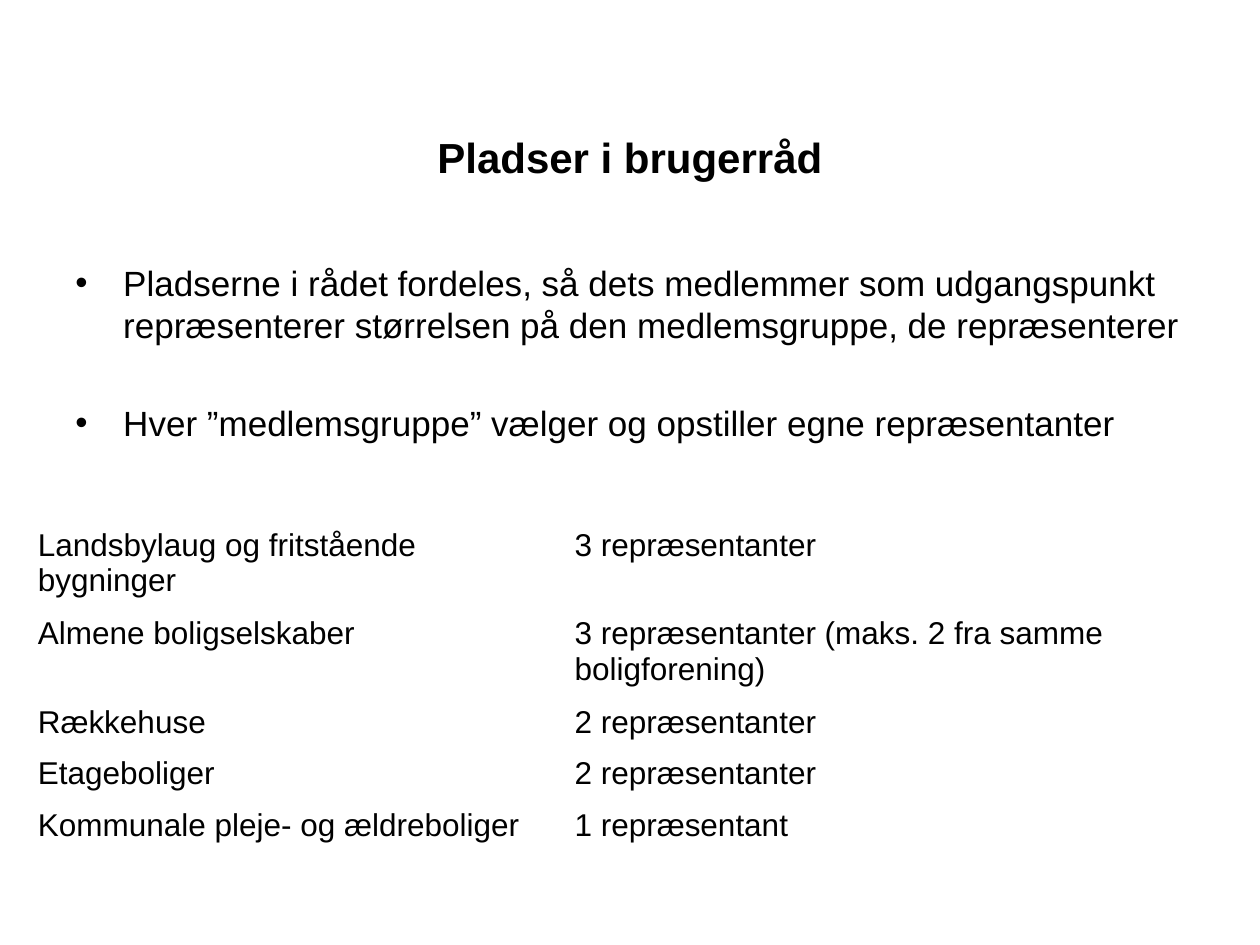
from lxml import etree
from pptx import Presentation
from pptx.dml.color import RGBColor
from pptx.enum.text import MSO_ANCHOR as Anchor, PP_ALIGN as Align
from pptx.oxml.ns import qn
from pptx.util import Inches, Pt

COLORS = {"text": "000000", "background": "FFFFFF"}
FONT = "Arial"

TITLE = "Pladser i brugerråd"
BULLETS = [
    "Pladserne i rådet fordeles, så dets medlemmer som udgangspunkt "
    "repræsenterer størrelsen på den medlemsgruppe, de repræsenterer",
    "Hver ”medlemsgruppe” vælger og opstiller egne repræsentanter",
]
SEATS = [
    ("Landsbylaug og fritstående bygninger", "3 repræsentanter"),
    ("Almene boligselskaber",
     "3 repræsentanter (maks. 2 fra samme boligforening)"),
    ("Rækkehuse", "2 repræsentanter"),
    ("Etageboliger", "2 repræsentanter"),
    ("Kommunale pleje- og ældreboliger", "1 repræsentant"),
]
COLUMN_WIDTHS = (4.26, 5.5)
ROW_HEIGHT = 0.41


def style_text(para, size, bold=False):
    for span in para.runs:
        span.font.name = FONT
        span.font.size = Pt(size)
        span.font.bold = bold
        span.font.color.rgb = RGBColor.from_string(COLORS["text"])


def add_box(page, left, top, width, height, anchor):
    box = page.shapes.add_textbox(
        Inches(left), Inches(top), Inches(width), Inches(height))
    box.text_frame.word_wrap = True
    box.text_frame.vertical_anchor = anchor
    return box.text_frame


def add_title(page):
    para = add_box(page, 0.5, 0.53, 9, 1.42, Anchor.MIDDLE).paragraphs[0]
    para.text = TITLE
    para.alignment = Align.CENTER
    style_text(para, 24, bold=True)


def set_bullet(para):
    properties = para._p.get_or_add_pPr()
    properties.set("marL", str(Inches(0.38)))
    properties.set("indent", str(Inches(-0.38)))
    etree.SubElement(properties, qn("a:buFont")).set("typeface", FONT)
    etree.SubElement(properties, qn("a:buChar")).set("char", "•")


def add_bullets(page):
    frame = add_box(page, 0.5, 2.03, 9, 4.67, Anchor.TOP)
    for index, text in enumerate(BULLETS):
        para = frame.paragraphs[0] if index == 0 else frame.add_paragraph()
        para.text = text
        set_bullet(para)
        if index:
            para.space_before = Pt(32)
        style_text(para, 20)


def add_seat_table(page):
    table = page.shapes.add_table(
        len(SEATS), len(COLUMN_WIDTHS), Inches(0.2), Inches(4.14),
        Inches(sum(COLUMN_WIDTHS)), Inches(ROW_HEIGHT * len(SEATS))).table
    table.first_row = False
    table.horz_banding = False
    for column, width in zip(table.columns, COLUMN_WIDTHS):
        column.width = Inches(width)
    for row, texts in zip(table.rows, SEATS):
        row.height = Inches(ROW_HEIGHT)
        for cell, text in zip(row.cells, texts):
            cell.fill.background()
            cell.text_frame.text = text
            style_text(cell.text_frame.paragraphs[0], 18)


def main():
    deck = Presentation()
    deck.slide_width, deck.slide_height = Inches(10), Inches(7.5)
    page = deck.slides.add_slide(deck.slide_layouts[6])
    fill = page.background.fill
    fill.solid()
    fill.fore_color.rgb = RGBColor.from_string(COLORS["background"])

    # Heading, rules for the seats, then seats per group
    add_title(page)
    add_bullets(page)
    add_seat_table(page)
    deck.save("out.pptx")


if __name__ == "__main__":
    main()
